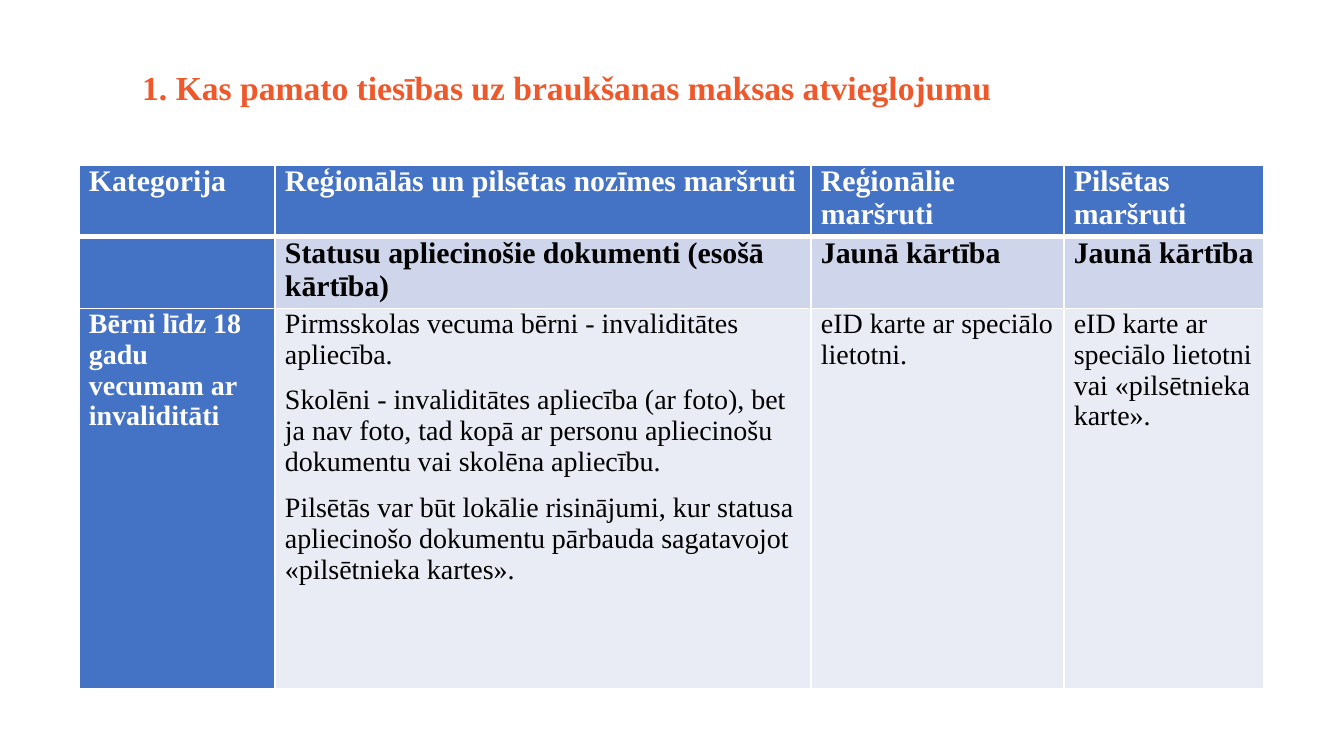
import pptx
import pptx.util
import pptx.dml.color
import pptx.enum.text
import pptx.oxml.ns
import lxml.etree

RGB = pptx.dml.color.RGBColor
WHITE = RGB(0xFF, 0xFF, 0xFF)
BLACK = RGB(0, 0, 0)
CORAL = RGB(0xEE, 0x58, 0x2B)
BLUE = RGB(0x44, 0x72, 0xC4)
MID = RGB(0xCF, 0xD5, 0xEA)
PALE = RGB(0xE9, 0xEB, 0xF5)
FONT = "Times New Roman"

# Content: each cell is a list of paragraphs
TITLE = "1. Kas pamato tiesības uz braukšanas maksas atvieglojumu"
ROWS = [
    [["Kategorija"], ["Reģionālās un pilsētas nozīmes maršruti"],
     ["Reģionālie maršruti"], ["Pilsētas maršruti"]],
    [[], ["Statusu apliecinošie dokumenti (esošā kārtība)"],
     ["Jaunā kārtība"], ["Jaunā kārtība"]],
    [["Bērni līdz 18 gadu vecumam ar invaliditāti"],
     ["Pirmsskolas vecuma bērni - invaliditātes apliecība.",
      "Skolēni - invaliditātes apliecība (ar foto), bet ja nav foto, tad kopā "
      "ar personu apliecinošu dokumentu vai skolēna apliecību.",
      "Pilsētās var būt lokālie risinājumi, kur statusa apliecinošo dokumentu "
      "pārbauda sagatavojot «pilsētnieka kartes»."],
     ["eID karte ar speciālo lietotni."],
     ["eID karte ar speciālo lietotni vai «pilsētnieka karte»."]],
]
WIDTHS = [196, 536, 253, 200]
HEIGHTS = [71, 66, 380]
FILLS = [BLUE, MID, PALE]
SIZES = [16, 16, 15]


def px(n):
    return pptx.util.Emu(round(n * 914400 / 134.4))


def write(para, text, size, color, bold):
    run = para.add_run()
    run.text = text
    font = run.font
    font.name, font.size, font.bold = FONT, pptx.util.Pt(size), bold
    font.color.rgb = color


def edge(cell, side, width):
    props = cell._tc.get_or_add_tcPr()
    tag = pptx.oxml.ns.qn
    line = lxml.etree.Element(tag("a:" + side), w=str(pptx.util.Pt(width)))
    fill = lxml.etree.SubElement(line, tag("a:solidFill"))
    lxml.etree.SubElement(fill, tag("a:srgbClr"), val=str(WHITE))
    return props, line


def frame(cell, widths):
    # Borders must come before the fill in the cell properties
    for i, (side, width) in enumerate(widths.items()):
        props, line = edge(cell, side, width)
        props.insert(i, line)


deck = pptx.Presentation()
deck.slide_width, deck.slide_height = px(1344), px(756)
slide = deck.slides.add_slide(deck.slide_layouts[6])

# Title
box = slide.shapes.add_textbox(px(129), px(56), px(1134), px(134))
text = box.text_frame
text.word_wrap = True
text.margin_top = px(11)
text.vertical_anchor = pptx.enum.text.MSO_ANCHOR.TOP
write(text.paragraphs[0], TITLE, 18, CORAL, True)

# Table
table = slide.shapes.add_table(len(ROWS), len(WIDTHS), px(79), px(165),
                               px(sum(WIDTHS)), px(sum(HEIGHTS))).table
for col, width in zip(table.columns, WIDTHS):
    col.width = px(width)
for row, height in zip(table.rows, HEIGHTS):
    row.height = px(height)

# Cells: header row and first column are blue with white bold text
for r, row in enumerate(ROWS):
    for c, paras in enumerate(row):
        cell = table.cell(r, c)
        head = r == 0 or c == 0
        cell.fill.solid()
        cell.fill.fore_color.rgb = BLUE if head else FILLS[r]
        cell.margin_left = cell.margin_right = px(10)
        cell.margin_top = cell.margin_bottom = 0
        frame(cell, {"lnL": 1, "lnR": 1, "lnT": 3 if r == 1 else 1,
                     "lnB": 3 if r == 0 else 1})
        for i, words in enumerate(paras):
            body = cell.text_frame
            para = body.add_paragraph() if i else body.paragraphs[0]
            para.space_after = pptx.util.Pt(8)
            write(para, words, SIZES[r], WHITE if head else BLACK,
                  head or r == 1)

deck.save("out.pptx")
